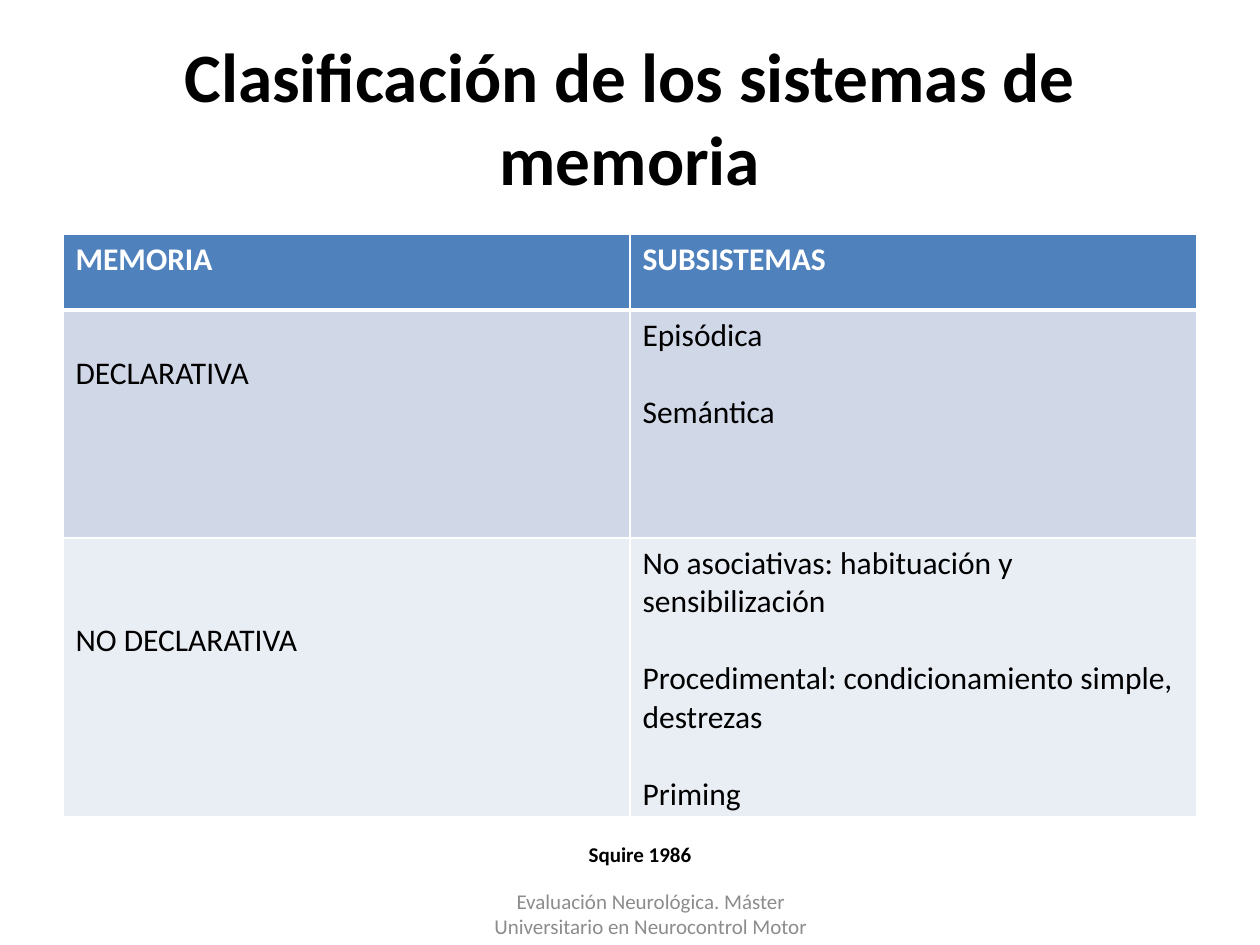
import collections

import lxml.etree
import pptx
import pptx.dml.color
import pptx.enum.text
import pptx.oxml.ns
import pptx.util

COLORS = {
    "ink": "000000",
    "paper": "FFFFFF",
    "header": "4F81BD",
    "band_dark": "D0D8E8",
    "band_light": "E9EDF4",
    "footer": "8C8C8C",
}
FONT = "Calibri"
UNIT = pptx.util.Inches(0.1)  # the page is a grid of 100 columns by 75 rows
PAGE_COLUMNS, PAGE_ROWS = 100, 75
BODY_SIZE = 18
BODY_LINE = pptx.util.Pt(22)  # height of one line of body text
CELL_MARGIN = pptx.util.Inches(0.05)

Box = collections.namedtuple("Box", "left top width height")

TITLE_BOX = Box(5, 3, 90, 12.5)
TABLE_BOX = Box(5, 18.6, 90, 45)
SOURCE_BOX = Box(39, 65.8, 23.6, 3.9)
FOOTER_BOX = Box(35.8, 70.5, 31.7, 4)

HEADINGS = ("MEMORIA", "SUBSISTEMAS")
ROW_HEIGHTS = (6, 18.1, 20.9)
# name, lines the name is lowered by, subsystems, band colour
SYSTEMS = (
    ("DECLARATIVA", 1, ("Episódica", "Semántica"), "band_dark"),
    ("NO DECLARATIVA", 2, (
        "No asociativas: habituación y sensibilización",
        "Procedimental: condicionamiento simple, destrezas",
        "Priming",
    ), "band_light"),
)


def grid(count):
    return round(count * UNIT)


def rgb(name):
    return pptx.dml.color.RGBColor.from_string(COLORS[name])


def write(para, text, size, color, bold=False):
    span = para.add_run()
    span.text = text
    for name, value in {"name": FONT, "size": pptx.util.Pt(size), "bold": bold}.items():
        setattr(span.font, name, value)
    span.font.color.rgb = rgb(color)


def add_centred_text(page, box, text, size, color, bold=False):
    frame = page.shapes.add_textbox(*map(grid, box)).text_frame
    frame.word_wrap = True
    frame.vertical_anchor = pptx.enum.text.MSO_ANCHOR.MIDDLE
    para = frame.paragraphs[0]
    para.alignment = pptx.enum.text.PP_ALIGN.CENTER
    write(para, text, size, color, bold)


def set_borders(cell, widths):
    """Draw paper-coloured borders; widths maps each side to points."""
    properties = cell._tc.get_or_add_tcPr()
    for side, width in widths.items():
        line = lxml.etree.SubElement(
            properties, pptx.oxml.ns.qn(f"a:ln{side}"), w=str(pptx.util.Pt(width)))
        fill = lxml.etree.SubElement(line, pptx.oxml.ns.qn("a:solidFill"))
        lxml.etree.SubElement(
            fill, pptx.oxml.ns.qn("a:srgbClr"), val=COLORS["paper"])


def fill_cell(cell, texts, fill, color="ink", bold=False, lowered=0, top=1, bottom=1):
    """Write paragraphs one blank line apart, lowered by a number of lines."""
    set_borders(cell, {"L": 1, "R": 1, "T": top, "B": bottom})
    cell.fill.solid()
    cell.fill.fore_color.rgb = rgb(fill)
    cell.margin_top = CELL_MARGIN + lowered * BODY_LINE
    frame = cell.text_frame
    for index, text in enumerate(texts):
        para = frame.add_paragraph() if index else frame.paragraphs[0]
        if index:
            para.space_before = BODY_LINE
        write(para, text, BODY_SIZE, color, bold)


def add_memory_table(page, box):
    table = page.shapes.add_table(
        len(ROW_HEIGHTS), len(HEADINGS), *map(grid, box)).table
    for column in table.columns:
        column.width = grid(box.width / len(HEADINGS))
    for row, height in zip(table.rows, ROW_HEIGHTS):
        row.height = grid(height)
    for index, heading in enumerate(HEADINGS):
        fill_cell(table.cell(0, index), [heading], "header", "paper", True, bottom=3)
    for index, (name, lowered, subsystems, band) in enumerate(SYSTEMS, 1):
        top = 3 if index == 1 else 1
        fill_cell(table.cell(index, 0), [name], band, lowered=lowered, top=top)
        fill_cell(table.cell(index, 1), subsystems, band, top=top)


def main():
    deck = pptx.Presentation()
    deck.slide_width, deck.slide_height = grid(PAGE_COLUMNS), grid(PAGE_ROWS)
    page = deck.slides.add_slide(deck.slide_layouts[6])
    add_centred_text(page, TITLE_BOX, "Clasificación de los sistemas de memoria",
                     39.6, "ink", True)
    add_memory_table(page, TABLE_BOX)
    add_centred_text(page, SOURCE_BOX, "Squire 1986", 12, "ink", True)
    add_centred_text(
        page, FOOTER_BOX,
        "Evaluación Neurológica. Máster Universitario en Neurocontrol Motor",
        12, "footer")
    deck.save("out.pptx")


if __name__ == "__main__":
    main()
